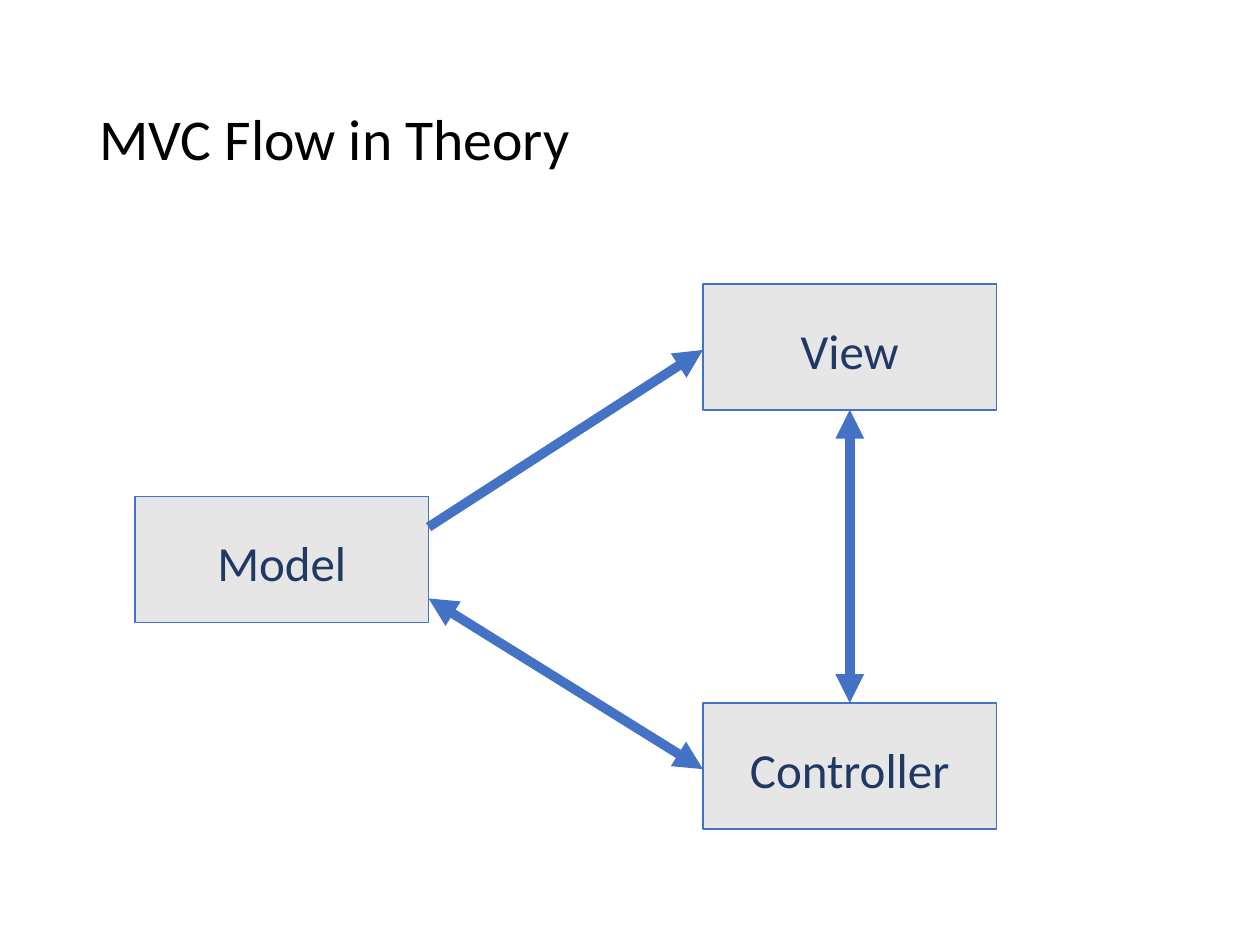
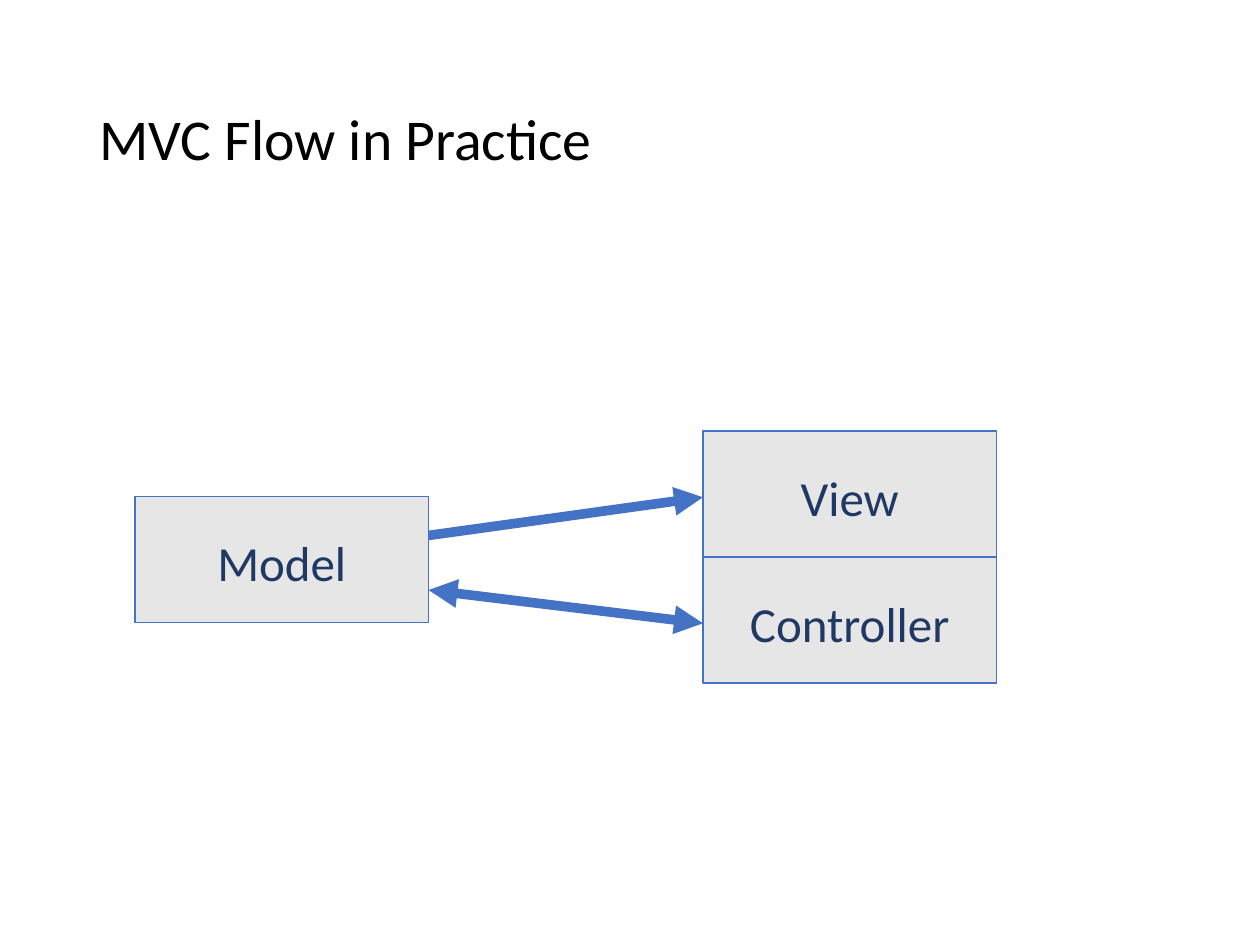
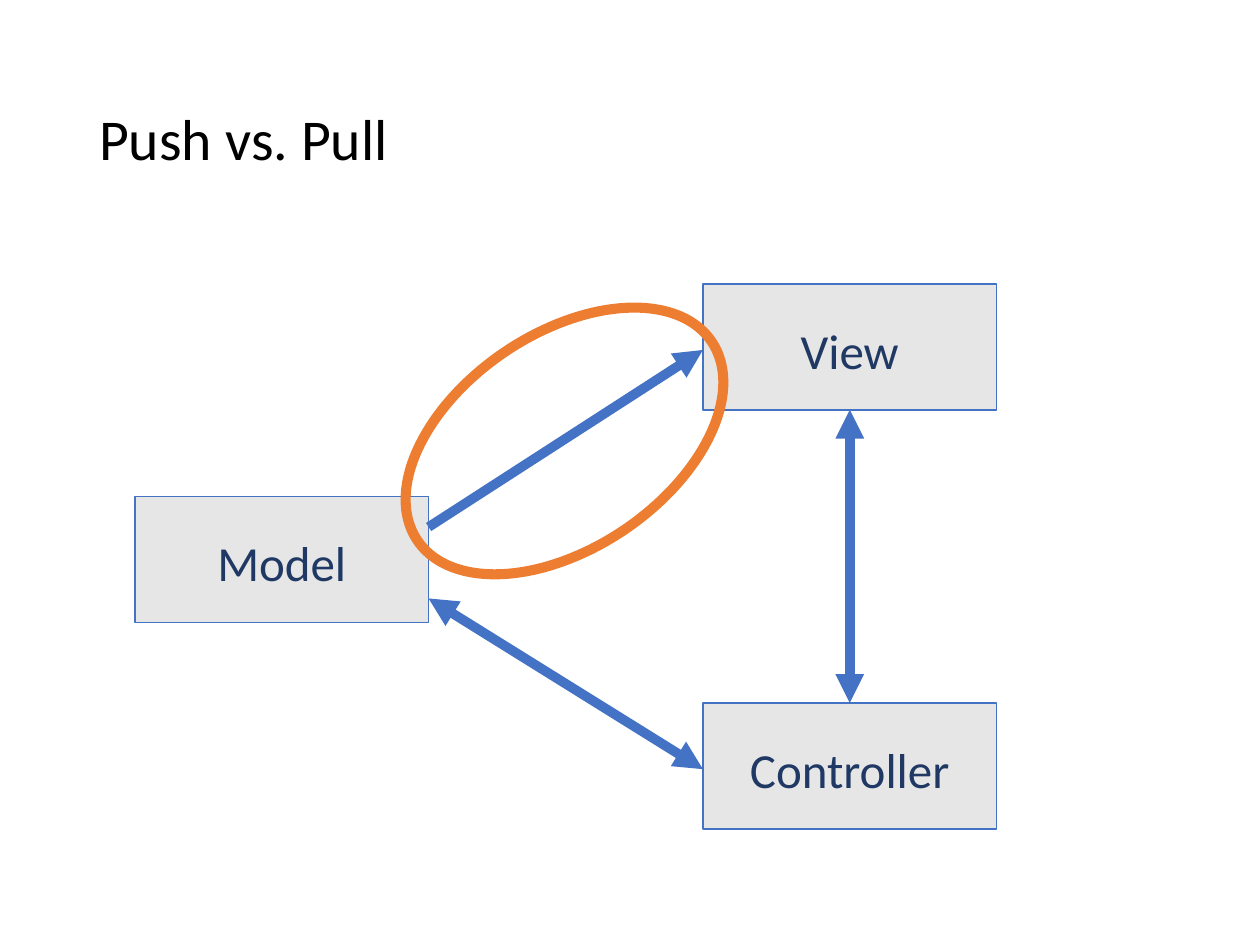
import dataclasses

import lxml.etree
import pptx
import pptx.dml.color
import pptx.enum.shapes
import pptx.enum.text
import pptx.oxml.ns
import pptx.util

Cm = pptx.util.Cm
Pt = pptx.util.Pt
Shape = pptx.enum.shapes.MSO_SHAPE
Align = pptx.enum.text.PP_ALIGN
Anchor = pptx.enum.text.MSO_ANCHOR
Fit = pptx.enum.text.MSO_AUTO_SIZE
TOP, LEFT, BOTTOM = 0, 1, 2


@dataclasses.dataclass(frozen=True)
class Theme:
    font: str = "Calibri"
    black: str = "000000"
    navy: str = "203864"
    blue: str = "4472C4"
    grey: str = "E7E6E6"
    orange: str = "ED7D31"
    title: float = 33
    label: float = 28
    edge: float = 1
    arrow: float = 5.5
    ring: float = 5.75


def tint(code):
    return pptx.dml.color.RGBColor.from_string(code)


def write(frame, text, *, font, size, color, align=Align.LEFT,
          anchor=Anchor.TOP, space=1.0, fit=Fit.NONE):
    frame.word_wrap = True
    frame.auto_size = fit
    frame.vertical_anchor = anchor
    para = frame.paragraphs[0]
    para.alignment = align
    para.line_spacing = space
    run = para.add_run()
    run.text = text
    run.font.name = font
    run.font.size = Pt(size)
    run.font.color.rgb = tint(color)


class Deck:
    def __init__(self, theme):
        self.theme = theme
        self.file = pptx.Presentation()
        self.file.slide_width = Cm(25.4)
        self.file.slide_height = Cm(19.05)
        self.slide = None

    def page(self, title):
        self.slide = self.file.slides.add_slide(self.file.slide_layouts[6])
        area = self.slide.shapes.add_textbox(Cm(1.75), Cm(1.02), Cm(21.89), Cm(3.68))
        write(area.text_frame, title, font=self.theme.font, size=self.theme.title,
              color=self.theme.black, anchor=Anchor.MIDDLE, space=0.9)

    def stroke(self, item, color, width):
        item.line.color.rgb = tint(color)
        item.line.width = Pt(width)

    def box(self, text, left, top):
        group = self.slide.shapes.add_group_shape().shapes
        wide = Cm(5.92)
        rect = group.add_shape(Shape.RECTANGLE, Cm(left), Cm(top), wide, Cm(2.54))
        rect.shadow.inherit = False
        rect.fill.solid()
        rect.fill.fore_color.rgb = tint(self.theme.grey)
        self.stroke(rect, self.theme.blue, self.theme.edge)
        label = group.add_textbox(Cm(left), Cm(top + 0.61), wide, Cm(1.45))
        write(label.text_frame, text, font=self.theme.font, size=self.theme.label,
              color=self.theme.navy, align=Align.CENTER, fit=Fit.SHAPE_TO_FIT_TEXT)
        return rect, label

    def arrow(self, start=(0, 0), end=(0, 0), tail=None, tip=None, both=False):
        kind = pptx.enum.shapes.MSO_CONNECTOR.STRAIGHT
        line = self.slide.shapes.add_connector(kind, *start, *end)
        if tail:
            line.begin_connect(*tail)
        if tip:
            line.end_connect(*tip)
        self.stroke(line, self.theme.blue, self.theme.arrow)
        name = pptx.oxml.ns.qn
        for mark in ("a:headEnd", "a:tailEnd") if both else ("a:tailEnd",):
            lxml.etree.SubElement(line.line._ln, name(mark), type="triangle")
        lxml.etree.SubElement(line._element.spPr, name("a:effectLst"))

    def ring(self, left, top, wide, high, turn):
        oval = self.slide.shapes.add_shape(
            Shape.OVAL, Cm(left), Cm(top), Cm(wide), Cm(high))
        oval.shadow.inherit = False
        oval.rotation = turn
        oval.fill.background()
        self.stroke(oval, self.theme.orange, self.theme.ring)

    def flow(self, title, high, low, gap, linked):
        self.page(title)
        _, model = self.box("Model", 2.72, 10.01)
        view, show = self.box("View", 14.17, high)
        control, guide = self.box("Controller", 14.17, low)
        side = model.left + model.width
        mid = model.top + model.height // 2
        self.arrow(start=(side, mid - Cm(gap)), tip=(show, LEFT))
        self.arrow(end=(side, mid + Cm(gap)), tail=(guide, LEFT), both=True)
        if linked:
            self.arrow(tail=(control, TOP), tip=(view, BOTTOM), both=True)


def main():
    deck = Deck(Theme())
    wide = dict(high=5.72, low=14.17, gap=0.72, linked=True)
    deck.flow("MVC Flow in Theory", **wide)
    deck.flow("MVC Flow in Practice", high=8.69, low=11.23, gap=0.55, linked=False)
    deck.flow("Push vs. Pull", **wide)
    deck.ring(9.22, 5.31, 4.32, 7.16, turn=55.9)
    deck.file.save("out.pptx")


if __name__ == "__main__":
    main()
